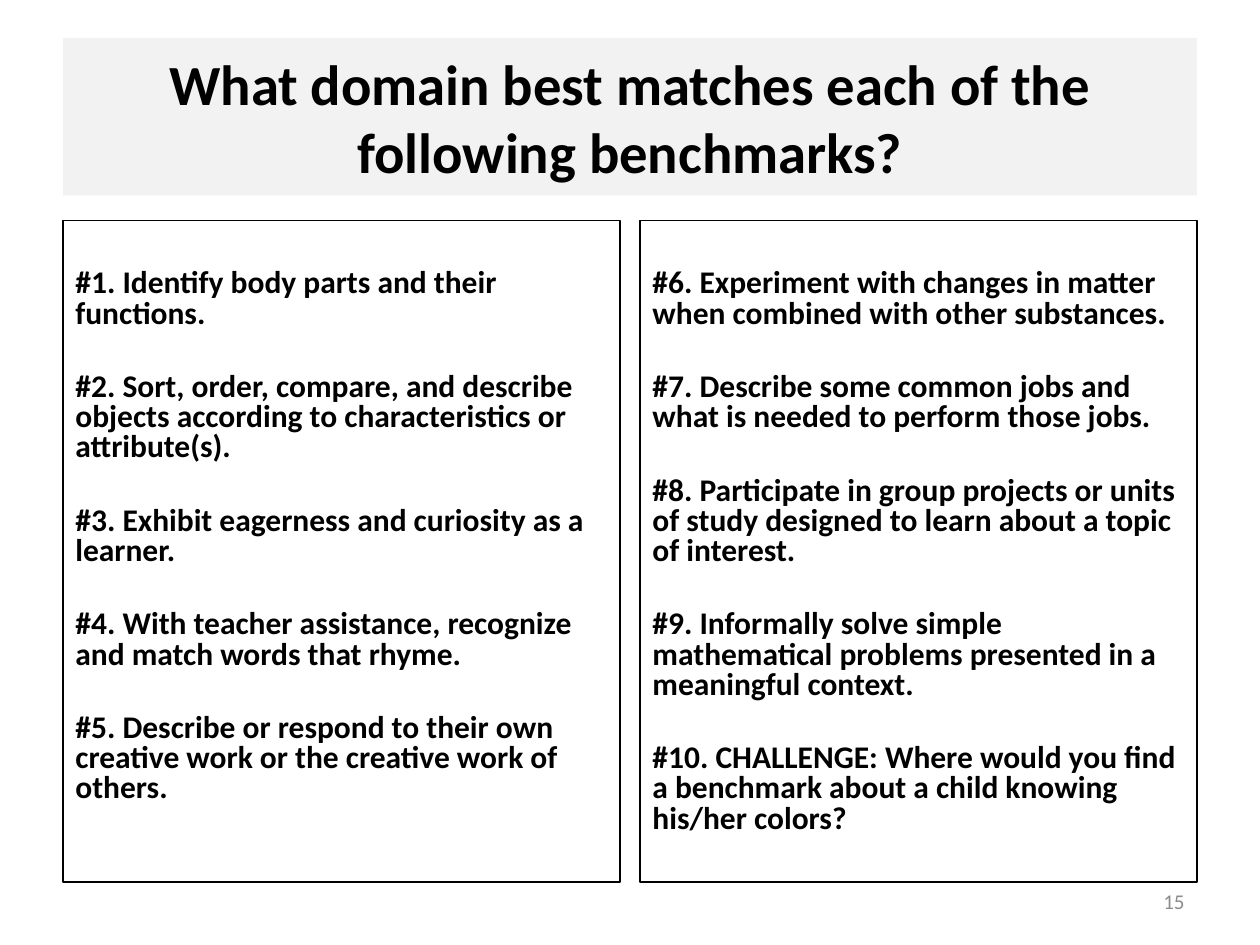
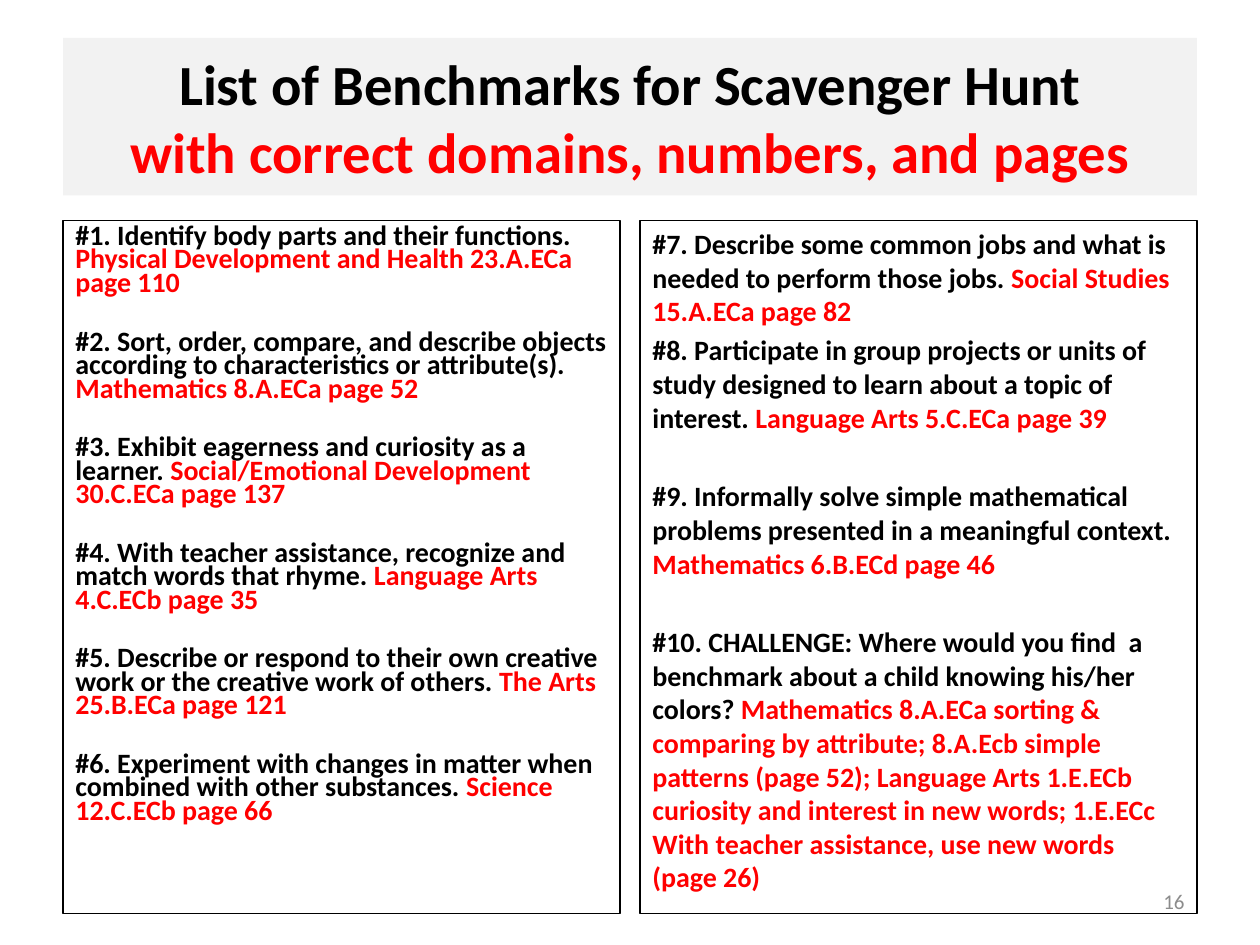
"""Build two slides on matching benchmarks with their learning domains."""
import pptx
import pptx.dml.color
import pptx.enum.text
import pptx.util

Inches = pptx.util.Inches
Pt = pptx.util.Pt
ALIGN = pptx.enum.text.PP_ALIGN
ANCHOR = pptx.enum.text.MSO_ANCHOR

FONT = "Calibri"
COLORS = {"text": "000000", "answer": "FF0000", "band": "F2F2F2", "number": "8C8C8C"}
MARGIN = 0.5
COLUMN_TOP = 1.75
COLUMN_WIDTH = 4.42
COLUMN_LEFTS = (MARGIN, 10 - MARGIN - COLUMN_WIDTH)

BENCHMARKS = [
    "#1. Identify body parts and their functions.",
    "#2. Sort, order, compare, and describe objects according to characteristics or attribute(s).",
    "#3. Exhibit eagerness and curiosity as a learner.",
    "#4. With teacher assistance, recognize and match words that rhyme.",
    "#5. Describe or respond to their own creative work or the creative work of others.",
    "#6. Experiment with changes in matter when combined with other substances.",
    "#7. Describe some common jobs and what is needed to perform those jobs.",
    "#8. Participate in group projects or units of study designed to learn about a topic of interest.",
    "#9. Informally solve simple mathematical problems presented in a meaningful context.",
    "#10. CHALLENGE: Where would you find  a benchmark about a child knowing his/her colors?",
]
ANSWERS = [
    "Physical Development and Health 23.A.ECa page 110",
    "Mathematics 8.A.ECa page 52",
    "Social/Emotional Development 30.C.ECa page 137",
    "Language Arts 4.C.ECb page 35",
    "The Arts 25.B.ECa page 121",
    "Science 12.C.ECb page 66",
    "Social Studies 15.A.ECa page 82",
    "Language Arts 5.C.ECa page 39",
    "Mathematics 6.B.ECd page 46",
    "Mathematics 8.A.ECa sorting & comparing by attribute; 8.A.Ecb simple patterns "
    "(page 52); Language Arts 1.E.ECb curiosity and interest in new words; 1.E.ECc "
    "With teacher assistance, use new words (page 26)",
]


def rgb(name):
    """Return the named colour."""
    return pptx.dml.color.RGBColor.from_string(COLORS[name])


def add_run(p, text, size, color="text", bold=True):
    """Add one formatted run to a paragraph."""
    r = p.add_run()
    r.text = text
    r.font.name = FONT
    r.font.size = Pt(size)
    r.font.bold = bold
    r.font.color.rgb = rgb(color)


def add_title(slide, lines):
    """Fill the title band with (text, colour) lines."""
    sp = slide.shapes.title
    sp.left, sp.top = Inches(MARGIN), Inches(0.3)
    sp.width, sp.height = Inches(9), Inches(1.25)
    sp.fill.solid()
    sp.fill.fore_color.rgb = rgb("band")
    tf = sp.text_frame
    tf.auto_size = pptx.enum.text.MSO_AUTO_SIZE.NONE
    tf.vertical_anchor = ANCHOR.MIDDLE
    p = tf.paragraphs[0]
    p.alignment = ALIGN.CENTER
    for i, (text, color) in enumerate(lines):
        if i:
            p.add_line_break()
        add_run(p, text, 32.4, color)


def add_number(slide, number):
    """Add the slide number at the bottom right."""
    sp = slide.shapes.add_textbox(Inches(7.17), Inches(6.95), Inches(2.33), Inches(0.4))
    tf = sp.text_frame
    tf.word_wrap = True
    tf.vertical_anchor = ANCHOR.MIDDLE
    p = tf.paragraphs[0]
    p.alignment = ALIGN.RIGHT
    add_run(p, str(number), 12, "number", False)


def add_column(slide, column, height, items, size, gaps, spacing=1.0, inset=0.05):
    """Add an outlined column of (benchmark, answer) items with gaps between them."""
    sp = slide.shapes.add_textbox(Inches(COLUMN_LEFTS[column]), Inches(COLUMN_TOP),
                                  Inches(COLUMN_WIDTH), Inches(height))
    sp.line.color.rgb = rgb("text")
    sp.line.width = Pt(0.75)
    tf = sp.text_frame
    tf.word_wrap = True
    tf.margin_top = Inches(inset)
    for i, (benchmark, answer) in enumerate(items):
        p = tf.add_paragraph() if i else tf.paragraphs[0]
        p.line_spacing = spacing
        if i:
            p.space_before = Pt(gaps[i - 1])
        add_run(p, benchmark + " " if answer else benchmark, size)
        if answer:
            add_run(p, answer, size, "answer")


def add_slide(prs, number, title):
    """Add a slide with its title band and number."""
    slide = prs.slides.add_slide(prs.slide_layouts[5])
    add_title(slide, title)
    add_number(slide, number)
    return slide


def main():
    """Build and save the presentation."""
    prs = pptx.Presentation()
    prs.slide_width, prs.slide_height = Inches(10), Inches(7.5)

    slide = add_slide(prs, 15, [
        ("What domain best matches each of the following benchmarks?", "text")])
    questions = [(benchmark, None) for benchmark in BENCHMARKS]
    for column, items in enumerate((questions[:5], questions[5:])):
        add_column(slide, column, 5.25, items, 18, [24.6] * 4, 0.8, 0.39)

    slide = add_slide(prs, 16, [
        ("List of Benchmarks for Scavenger Hunt", "text"),
        ("with correct domains, numbers, and pages", "answer")])
    solved = list(zip(BENCHMARKS, ANSWERS))
    add_column(slide, 0, 5.5, solved[:6], 16, [20] * 5, 0.7)
    add_column(slide, 1, 5.5, solved[6:], 16, [3.2, 25.8, 25.8])

    prs.save("out.pptx")


if __name__ == "__main__":
    main()
